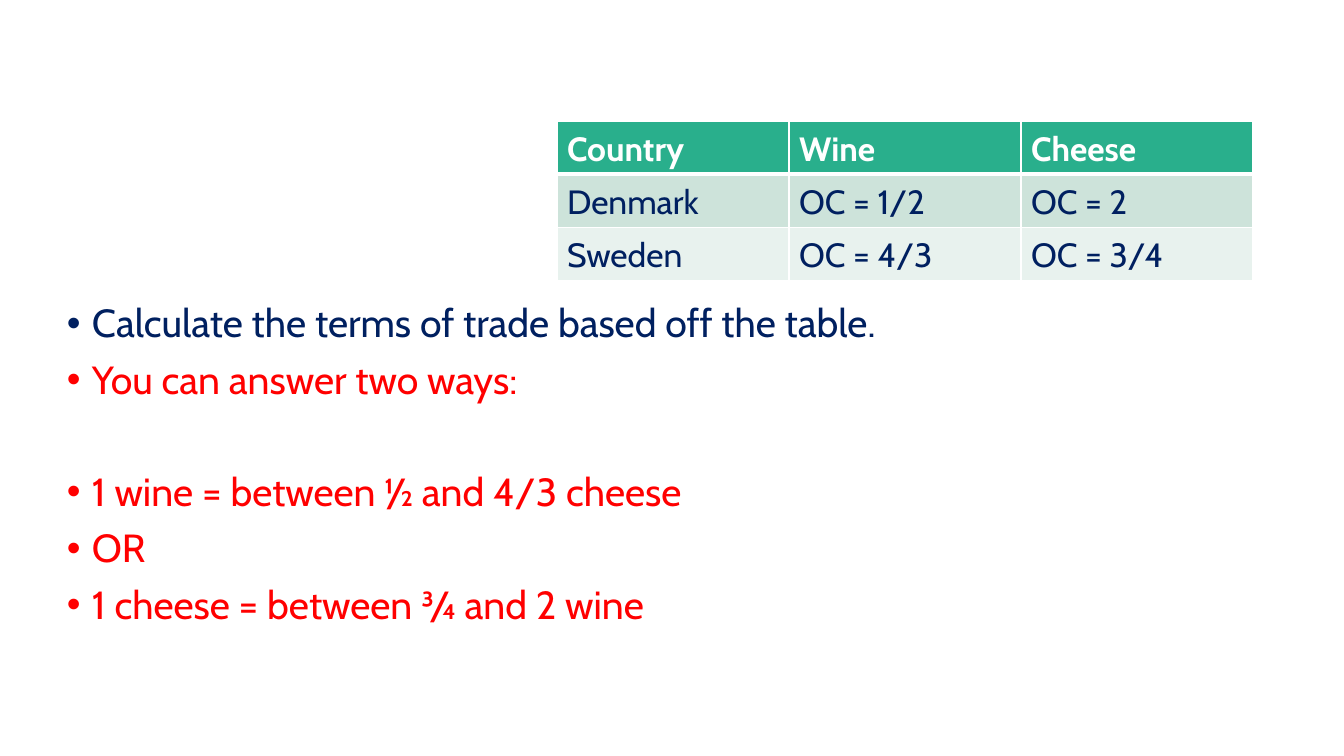
import pptx
import pptx.dml.color
import pptx.oxml
import pptx.oxml.ns
import pptx.util

RGBColor = pptx.dml.color.RGBColor
WHITE = RGBColor(0xFF, 0xFF, 0xFF)
NAVY = RGBColor(0x00, 0x20, 0x60)
RED = RGBColor(0xFF, 0x00, 0x00)
GREEN = RGBColor(0x29, 0xAF, 0x8C)
SAGE = RGBColor(0xCD, 0xE3, 0xDA)
MIST = RGBColor(0xE8, 0xF2, 0xEE)


def px(length):
    return pptx.util.Emu(round(length * 914400 / 100.8))


def set_format(target, values):
    for name, value in values.items():
        setattr(target, name, value)


class SlideBuilder:
    font_name = "Cabin"

    def __init__(self, presentation):
        self.slide = presentation.slides.add_slide(presentation.slide_layouts[6])

    def fill_paragraph(self, paragraph, text, size, color, bold, spacing):
        set_format(paragraph, spacing)
        run = paragraph.add_run()
        run.text = text
        set_format(run.font, {
            "name": self.font_name, "size": pptx.util.Pt(size), "bold": bold})
        run.font.color.rgb = color

    def bullet(self, paragraph, indent):
        properties = paragraph._p.get_or_add_pPr()
        properties.set("marL", str(px(indent)))
        properties.set("indent", str(-px(indent)))
        properties.append(pptx.oxml.parse_xml(
            f'<a:buFont {pptx.oxml.ns.nsdecls("a")} typeface="Arial"/>'))
        properties.append(pptx.oxml.parse_xml(
            f'<a:buChar {pptx.oxml.ns.nsdecls("a")} char="•"/>'))

    def bullet_list(self, left, top, width, height, items):
        shape = self.slide.shapes.add_textbox(px(left), px(top), px(width), px(height))
        frame = shape.text_frame
        frame.word_wrap = True
        for index, (text, color, space_before) in enumerate(items):
            paragraph = frame.add_paragraph() if index else frame.paragraphs[0]
            self.bullet(paragraph, 25)
            self.fill_paragraph(paragraph, text, 28, color, False, {
                "line_spacing": 0.9, "space_before": pptx.util.Pt(space_before)})

    def border(self, cell, side, width):
        cell._tc.get_or_add_tcPr().append(pptx.oxml.parse_xml(
            f'<a:ln{side} {pptx.oxml.ns.nsdecls("a")} w="{pptx.util.Pt(width)}">'
            f'<a:solidFill><a:srgbClr val="{WHITE}"/></a:solidFill></a:ln{side}>'))

    def table(self, left, top, column_width, row_height, rows, fills):
        columns = len(rows[0])
        frame = self.slide.shapes.add_table(
            len(rows), columns, px(left), px(top),
            px(column_width * columns), px(row_height * len(rows)))
        table = frame.table
        table.horz_banding = False
        for row_index, (texts, fill) in enumerate(zip(rows, fills)):
            header = row_index == 0
            widths = {"L": 1, "R": 1, "T": 3 if row_index == 1 else 1, "B": 3 if header else 1}
            for column_index, text in enumerate(texts):
                cell = table.cell(row_index, column_index)
                for side, width in widths.items():
                    self.border(cell, side, width)
                cell.fill.solid()
                cell.fill.fore_color.rgb = fill
                self.fill_paragraph(
                    cell.text_frame.paragraphs[0], text, 24,
                    WHITE if header else NAVY, header,
                    {"line_spacing": 1.07, "space_after": pptx.util.Pt(8)})


def main():
    presentation = pptx.Presentation()
    set_format(presentation, {"slide_width": px(1344), "slide_height": px(756)})
    builder = SlideBuilder(presentation)
    builder.bullet_list(57, 299, 1159, 480, [
        ("Calculate the terms of trade based off the table.", NAVY, 0),
        ("You can answer two ways:", RED, 10),
        ("1 wine = between ½ and 4/3 cheese", RED, 50),
        ("OR", RED, 10),
        ("1 cheese = between ¾ and 2 wine", RED, 10),
    ])
    builder.table(557, 121, 232, 53, [
        ("Country", "Wine", "Cheese"),
        ("Denmark", "OC = 1/2", "OC = 2"),
        ("Sweden", "OC = 4/3", "OC = 3/4"),
    ], (GREEN, SAGE, MIST))
    presentation.save("out.pptx")


if __name__ == "__main__":
    main()
